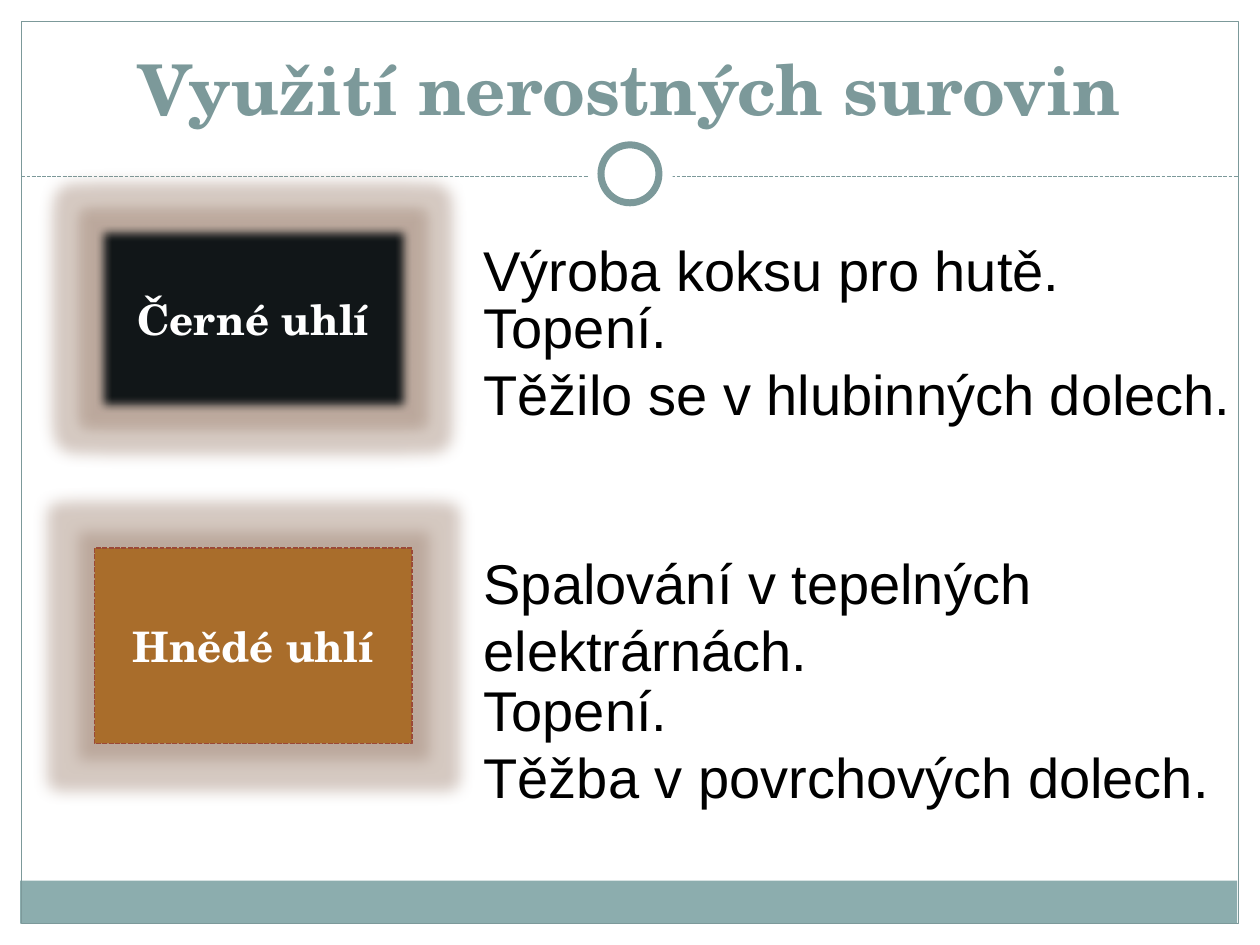
import pptx
import pptx.util
import pptx.dml.color
import pptx.enum.dml
import pptx.enum.shapes
import pptx.enum.text
import pptx.oxml
import pptx.oxml.ns
from pptx.util import Inches

RGB = pptx.dml.color.RGBColor
WHITE = RGB(0xFF, 0xFF, 0xFF)
BLACK = RGB(0, 0, 0)
TEAL = RGB(0x7C, 0x99, 0x9A)
PALE = RGB(0x8C, 0xAD, 0xAE)
COAL = RGB(0x11, 0x16, 0x18)
BROWN = RGB(0xA9, 0x6D, 0x2B)
RUST = RGB(0x9B, 0x49, 0x36)
GLOW = RGB(0x96, 0x78, 0x66)
SERIF = "TeX Gyre Schola"
SANS = "Arial"
KIND = pptx.enum.shapes.MSO_SHAPE
ANCHOR = pptx.enum.text.MSO_ANCHOR
CENTER = pptx.enum.text.PP_ALIGN.CENTER
DASH = pptx.enum.dml.MSO_LINE.SQUARE_DOT


def add_effect(shape, inner=""):
    """Set the effect list; an empty one turns the shadow off."""
    for old in shape._element.spPr.findall(pptx.oxml.ns.qn("a:effectLst")):
        shape._element.spPr.remove(old)
    shape._element.spPr.append(pptx.oxml.parse_xml(
        f'<a:effectLst {pptx.oxml.ns.nsdecls("a")}>{inner}</a:effectLst>'))


def set_line(line, color, width, dash=None):
    line.color.rgb = color
    line.width = pptx.util.Pt(width)
    if dash:
        line.dash_style = dash


def add_shape(slide, kind, box, fill=None, line=None, width=0.75, dash=None):
    shape = slide.shapes.add_shape(kind, *map(Inches, box))
    shape.shadow.inherit = False
    if fill is None:
        shape.fill.background()
    else:
        shape.fill.solid()
        shape.fill.fore_color.rgb = fill
    if line is None:
        shape.line.fill.background()
    else:
        set_line(shape.line, line, width, dash)
    return shape


def set_text(frame, lines, size, font, color, bold=False, align=None):
    for i, text in enumerate(lines):
        par = frame.add_paragraph() if i else frame.paragraphs[0]
        par.text = text
        par.alignment = align
        par.font.size = pptx.util.Pt(size)
        par.font.name = font
        par.font.bold = bold
        par.font.color.rgb = color


def add_text(slide, box, lines, size=32, font=SANS, color=BLACK, bold=False,
             align=None, anchor=ANCHOR.TOP, wrap=True):
    frame = slide.shapes.add_textbox(*map(Inches, box)).text_frame
    frame.word_wrap = wrap
    frame.vertical_anchor = anchor
    set_text(frame, lines, size, font, color, bold, align)


def add_frame(slide):
    for box in ((0, 0, 10, 1.52), (0, 0, 0.17, 7.5), (9.83, 0, 0.17, 7.5)):
        add_shape(slide, KIND.RECTANGLE, box, WHITE)
    add_shape(slide, KIND.RECTANGLE, (0.16, 6.99, 9.66, 0.34), PALE)
    add_shape(slide, KIND.RECTANGLE, (0.17, 0.17, 9.66, 7.16), line=TEAL)
    rule = slide.shapes.add_connector(
        pptx.enum.shapes.MSO_CONNECTOR.STRAIGHT,
        *map(Inches, (0.17, 1.4, 9.83, 1.4)))
    set_line(rule.line, TEAL, 0.75, DASH)
    add_effect(rule)
    add_shape(slide, KIND.OVAL, (4.67, 1.05, 0.67, 0.67), WHITE)
    add_shape(slide, KIND.OVAL, (4.77, 1.15, 0.46, 0.46), WHITE, TEAL, 4)


def add_label(slide, top, height, text, fill, soft=0):
    """Add a glowing box that names a kind of coal."""
    shape = add_shape(slide, KIND.RECTANGLE, (0.75, top, 2.52, height),
                      fill, RUST, 0.9, DASH)
    glow = (f'<a:glow rad="{Inches(0.25)}"><a:srgbClr val="{GLOW}">'
            '<a:alpha val="40000"/></a:srgbClr></a:glow>')
    edge = f'<a:softEdge rad="{Inches(soft)}"/>' if soft else ""
    add_effect(shape, glow + edge)
    shape.text_frame.vertical_anchor = ANCHOR.MIDDLE
    set_text(shape.text_frame, [text], 24, SERIF, WHITE, True, CENTER)


def main():
    deck = pptx.Presentation()
    deck.slide_width, deck.slide_height = Inches(10), Inches(7.5)
    slide = deck.slides.add_slide(deck.slide_layouts[6])
    add_frame(slide)
    add_text(slide, (0.33, 0.25, 9.33, 0.83), ["Využití nerostných surovin"],
             40, SERIF, TEAL, True, CENTER, ANCHOR.BOTTOM)

    add_label(slide, 1.78, 1.5, "Černé uhlí", COAL, 0.07)
    add_text(slide, (3.74, 1.82, 4.81, 0.64), ["Výroba koksu pro hutě."],
             wrap=False)
    add_text(slide, (3.74, 2.27, 6.18, 1.18),
             ["Topení.", "Těžilo se v hlubinných dolech."])

    add_label(slide, 4.35, 1.55, "Hnědé uhlí", BROWN)
    add_text(slide, (3.74, 4.3, 5.35, 1.18),
             ["Spalování v tepelných elektrárnách."])
    add_text(slide, (3.74, 5.31, 6, 1.18),
             ["Topení.", "Těžba v povrchových dolech."])

    deck.save("out.pptx")


if __name__ == "__main__":
    main()
